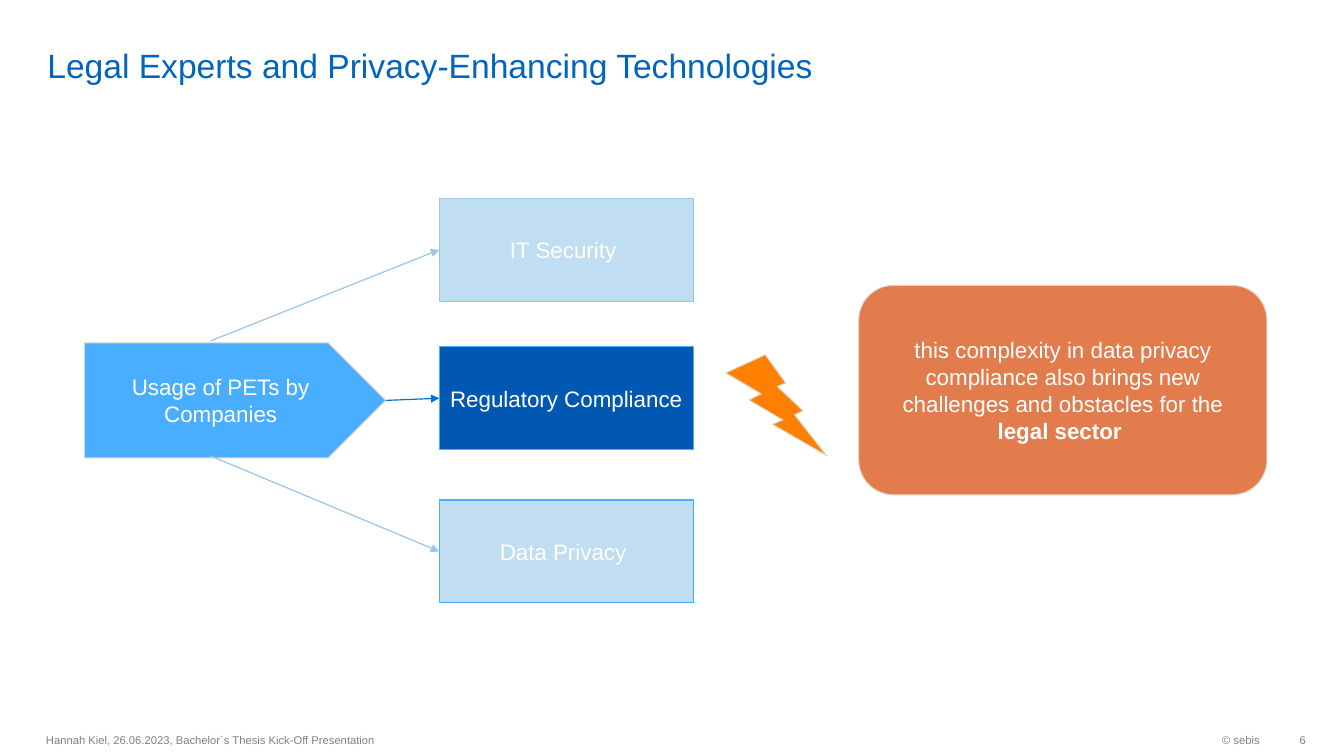
from lxml.etree import SubElement
from pptx import Presentation
from pptx.dml.color import RGBColor
from pptx.enum.shapes import MSO_CONNECTOR, MSO_SHAPE
from pptx.enum.text import MSO_ANCHOR, MSO_AUTO_SIZE, PP_ALIGN
from pptx.oxml.ns import qn
from pptx.util import Cm, Pt

FONT = "Arial"
TITLE_BLUE = RGBColor(0x00, 0x65, 0xBD)
GRAY = RGBColor(0x80, 0x80, 0x80)
WHITE = RGBColor(0xFF, 0xFF, 0xFF)
SKY = RGBColor(0x49, 0xAE, 0xFF)
PALE_BLUE = RGBColor(0xC1, 0xDD, 0xF2)
SOFT_BLUE = RGBColor(0x98, 0xC6, 0xEA)
DEEP_BLUE = RGBColor(0x00, 0x58, 0xB2)
ARROW_BLUE = RGBColor(0x00, 0x73, 0xCF)
TERRACOTTA = RGBColor(0xE3, 0x7C, 0x4D)
ORANGE = RGBColor(0xFF, 0x80, 0x00)
SAND = RGBColor(0xDA, 0xD7, 0xCB)


def write(shape, runs, size, color, align, anchor=MSO_ANCHOR.MIDDLE):
    """Fill a shape with one paragraph made of (text, bold) runs."""
    frame = shape.text_frame
    frame.auto_size = MSO_AUTO_SIZE.NONE
    frame.word_wrap = True
    frame.vertical_anchor = anchor
    paragraph = frame.paragraphs[0]
    paragraph.alignment = align
    for text, bold in runs:
        run = paragraph.add_run()
        run.text = text
        run.font.name = FONT
        run.font.size = Pt(size)
        run.font.bold = bold
        run.font.color.rgb = color


def add_block(slide, kind, box, fill, line, runs=()):
    shape = slide.shapes.add_shape(kind, *(Cm(value) for value in box))
    shape.shadow.inherit = False
    shape.fill.solid()
    shape.fill.fore_color.rgb = fill
    shape.line.color.rgb = line
    shape.line.width = Pt(0.75)
    if runs:
        write(shape, runs, 16, WHITE, PP_ALIGN.CENTER)
    return shape


def add_arrow(slide, start, end, color):
    arrow = slide.shapes.add_connector(
        MSO_CONNECTOR.STRAIGHT, *(Cm(value) for value in start + end))
    arrow.line.color.rgb = color
    arrow.line.width = Pt(0.85)
    SubElement(arrow.line._get_or_add_ln(), qn("a:tailEnd"), type="triangle")
    SubElement(arrow._element.spPr, qn("a:effectLst"))


def add_title(slide, box):
    title = slide.shapes.title
    title.left, title.top, title.width, title.height = (Cm(value) for value in box)
    title.text_frame.margin_top = title.text_frame.margin_bottom = 0
    write(title, [("Legal Experts and Privacy-Enhancing Technologies", False)],
          24, TITLE_BLUE, PP_ALIGN.LEFT, MSO_ANCHOR.BOTTOM)


def add_flow(slide, left, top, width, height):
    """Source pentagon on the left, three target boxes on the right."""
    source_width, source_height = 7.59, 2.9
    source_top = top + 3.64
    target_width, target_height = 6.4, 2.59
    target_left = left + width - target_width

    # Source
    add_block(slide, MSO_SHAPE.PENTAGON,
              (left, source_top, source_width, source_height),
              SKY, SAND, [("Usage of PETs by Companies", False)])

    # Targets, each with its arrow
    shoulder = left + 3.18
    targets = [
        ("IT Security ", top, PALE_BLUE, SOFT_BLUE,
         (shoulder, source_top - 0.05), SOFT_BLUE),
        ("Regulatory Compliance ", top + 3.74, DEEP_BLUE, SKY,
         (left + source_width, source_top + source_height / 2), ARROW_BLUE),
        ("Data Privacy ", top + height - target_height, PALE_BLUE, SKY,
         (shoulder, source_top + source_height - 0.05), SOFT_BLUE),
    ]
    for text, target_top, fill, line, start, arrow_color in targets:
        add_block(slide, MSO_SHAPE.RECTANGLE,
                  (target_left, target_top, target_width, target_height),
                  fill, line, [(text, False)])
        add_arrow(slide, start, (target_left, target_top + target_height / 2),
                  arrow_color)


def add_consequence(slide, left, top, width, height):
    """Lightning bolt followed by the rounded statement box."""
    bolt_size, statement_offset = 2.54, 3.35
    add_block(slide, MSO_SHAPE.LIGHTNING_BOLT,
              (left, top + 1.75, bolt_size, bolt_size), ORANGE, SAND)
    add_block(slide, MSO_SHAPE.ROUNDED_RECTANGLE,
              (left + statement_offset, top, width - statement_offset, height),
              TERRACOTTA, SAND,
              [("this complexity in data privacy compliance also brings new "
                "challenges and obstacles for the ", False),
               ("legal sector ", True)])


def add_footer(slide, left, top, width, height):
    number_width, owner_width = 0.91, 5.94
    number_left = left + width - number_width
    parts = [
        ("Hannah Kiel, 26.06.2023, Bachelor´s Thesis Kick-Off Presentation",
         left, 16, PP_ALIGN.LEFT, 0.25),
        ("© sebis", number_left - owner_width, owner_width, PP_ALIGN.RIGHT, 0.25),
        ("6", number_left, number_width, PP_ALIGN.RIGHT, 0),
    ]
    for text, part_left, part_width, align, right_margin in parts:
        label = slide.shapes.add_textbox(
            Cm(part_left), Cm(top), Cm(part_width), Cm(height))
        label.text_frame.margin_right = Cm(right_margin)
        write(label, [(text, False)], 8, GRAY, align)


def main():
    presentation = Presentation()
    presentation.slide_width = Cm(33.87)
    presentation.slide_height = Cm(19.05)
    slide = presentation.slides.add_slide(presentation.slide_layouts[5])
    add_title(slide, (0.94, 0.13, 29.41, 2.01))
    add_flow(slide, 2.13, 5, 15.34, 10.19)
    add_consequence(slide, 18.29, 7.19, 13.64, 5.28)
    add_footer(slide, 0.91, 18.25, 32, 0.8)
    presentation.save("out.pptx")


if __name__ == "__main__":
    main()
